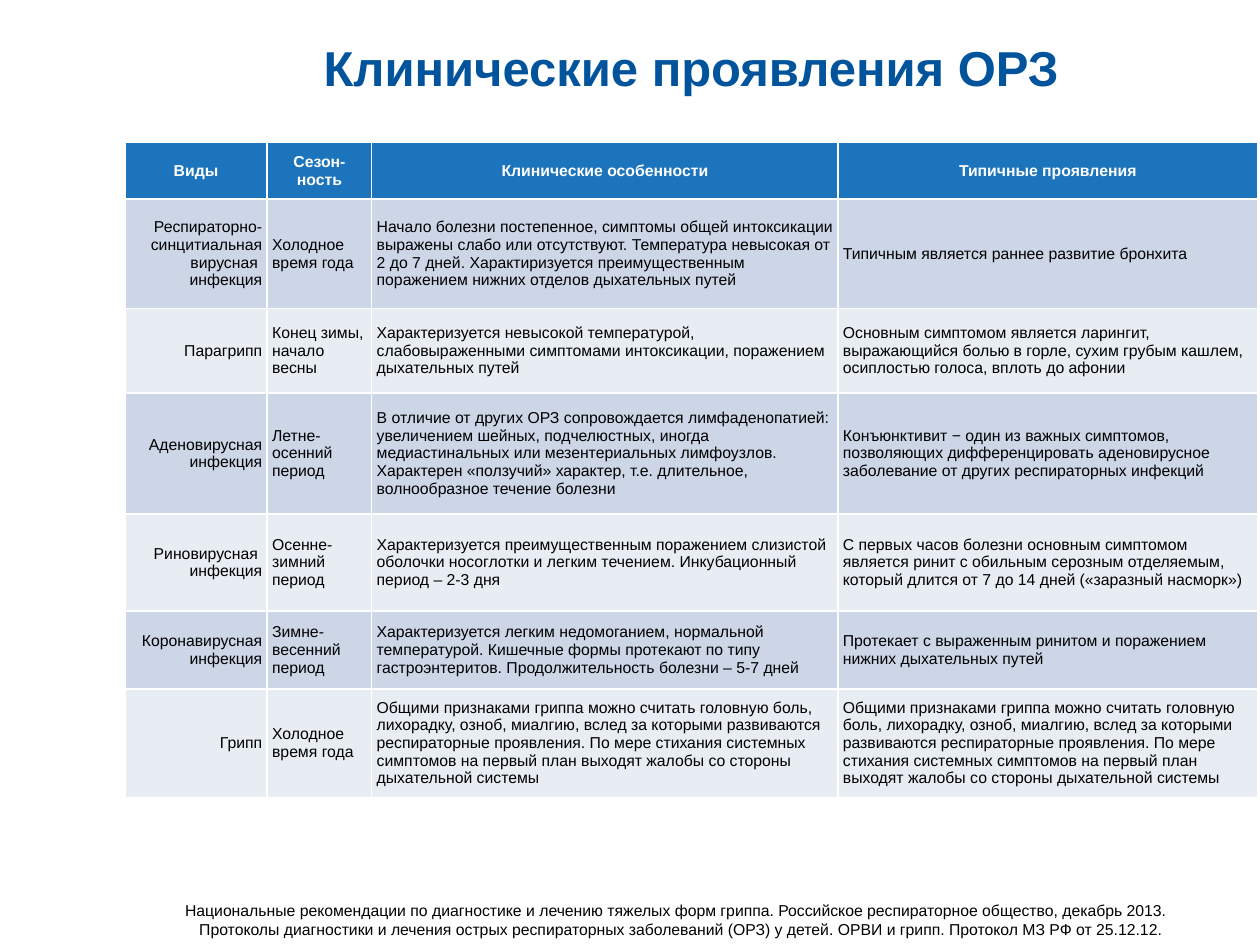
"""Build a slide with a table of clinical signs of acute respiratory diseases."""
from copy import deepcopy

from pptx import Presentation
from pptx.dml.color import RGBColor
from pptx.enum.text import MSO_ANCHOR, PP_ALIGN
from pptx.oxml.ns import qn
from pptx.util import Inches, Pt

COLORS = {"title": "01539C", "header": "1C75BC", "odd": "CDD6E7",
          "even": "E8ECF3", "white": "FFFFFF", "black": "000000"}


def write(tf, text, size=9, color="black", bold=False, align=PP_ALIGN.LEFT, after=0):
    for i, line in enumerate(text.split("\n")):
        p = tf.paragraphs[0] if i == 0 else tf.add_paragraph()
        p.text = line
        p.alignment = align
        p.space_before, p.space_after = Pt(0), Pt(after)
        for r in p.runs:
            r.font.name, r.font.size, r.font.bold = "Arial", Pt(size), bold
            r.font.color.rgb = RGBColor.from_string(COLORS[color])
        for br in p._p.findall(qn("a:br")):
            br.insert(0, deepcopy(p.runs[0]._r.rPr))


flu = ("Общими признаками гриппа можно считать головную боль, лихорадку, озноб, миалгию, "
       "вслед за которыми развиваются респираторные проявления. По мере стихания системных "
       "симптомов на первый план выходят жалобы со стороны дыхательной системы")
rows = [
    ("Виды", "Сезон-\vность", "Клинические особенности", "Типичные проявления"),
    ("Респираторно-синцитиальная вирусная \vинфекция", "Холодное время года",
     "Начало болезни постепенное, симптомы общей интоксикации выражены слабо или отсутствуют. "
     "Температура невысокая от 2 до 7 дней. Характиризуется преимущественным поражением "
     "нижних отделов дыхательных путей",
     "Типичным является раннее развитие бронхита"),
    ("Парагрипп", "Конец зимы, начало весны",
     "Характеризуется невысокой температурой, слабовыраженными симптомами интоксикации, "
     "поражением дыхательных путей",
     "Основным симптомом является ларингит, выражающийся болью в горле, сухим грубым кашлем, "
     "осиплостью голоса, вплоть до афонии"),
    ("Аденовирусная инфекция", "Летне-осенний период",
     "В отличие от других ОРЗ сопровождается лимфаденопатией: увеличением шейных, подчелюстных, "
     "иногда медиастинальных или мезентериальных лимфоузлов. Характерен «ползучий» характер, "
     "т.е. длительное, волнообразное течение болезни",
     "Конъюнктивит − один из важных симптомов, позволяющих дифференцировать аденовирусное "
     "заболевание от других респираторных инфекций"),
    ("Риновирусная \vинфекция", "Осенне-зимний период",
     "Характеризуется преимущественным поражением слизистой оболочки носоглотки и легким "
     "течением. Инкубационный период – 2-3 дня",
     "С первых часов болезни основным симптомом является ринит с обильным серозным отделяемым, "
     "который длится от 7 до 14 дней («заразный насморк»)"),
    ("Коронавирусная\nинфекция", "Зимне-весенний период",
     "Характеризуется легким недомоганием, нормальной температурой. Кишечные формы протекают "
     "по типу гастроэнтеритов. Продолжительность болезни – 5-7 дней",
     "Протекает с выраженным ринитом и поражением нижних дыхательных путей"),
    ("Грипп", "Холодное время года", flu, flu),
]
widths = [1.13, 0.83, 3.7, 3.33]
heights = [0.45, 0.87, 0.67, 0.96, 0.77, 0.62, 0.86]

prs = Presentation()
prs.slide_width, prs.slide_height = Inches(10), Inches(7.5)
s = prs.slides.add_slide(prs.slide_layouts[5])

title = s.shapes.title
title.left, title.top = Inches(0.97), Inches(0)
title.width, title.height = Inches(9.03), Inches(1.06)
title.text_frame.vertical_anchor = MSO_ANCHOR.MIDDLE
write(title.text_frame, "Клинические проявления ОРЗ", size=28, color="title",
      bold=True, align=PP_ALIGN.CENTER)

table = s.shapes.add_table(len(rows), len(widths), Inches(0.99), Inches(1.13),
                           Inches(sum(widths)), Inches(sum(heights))).table
for column, width in zip(table.columns, widths):
    column.width = Inches(width)
for i, (row, height) in enumerate(zip(rows, heights)):
    table.rows[i].height = Inches(height)
    fill = "header" if i == 0 else "odd" if i % 2 else "even"
    for j, text in enumerate(row):
        cell = table.cell(i, j)
        cell.fill.solid()
        cell.fill.fore_color.rgb = RGBColor.from_string(COLORS[fill])
        cell.vertical_anchor = MSO_ANCHOR.MIDDLE
        cell.margin_left = cell.margin_right = Inches(0.04)
        cell.margin_top = cell.margin_bottom = Inches(0.04)
        align = PP_ALIGN.CENTER if i == 0 else PP_ALIGN.LEFT if j else PP_ALIGN.RIGHT
        write(cell.text_frame, text, color="black" if i else "white", bold=i == 0,
              align=align, after=3 if j else 0)

tf = s.shapes.add_textbox(Inches(1.17), Inches(7.1), Inches(8.18), Inches(0.4)).text_frame
tf.word_wrap = True
write(tf, "Национальные рекомендации по диагностике и лечению тяжелых форм гриппа. "
          "Российское респираторное общество, декабрь 2013.\n"
          "Протоколы диагностики и лечения острых респираторных заболеваний (ОРЗ) у детей. "
          "ОРВИ и грипп. Протокол МЗ РФ от 25.12.12. ", align=PP_ALIGN.RIGHT)

prs.save("out.pptx")
